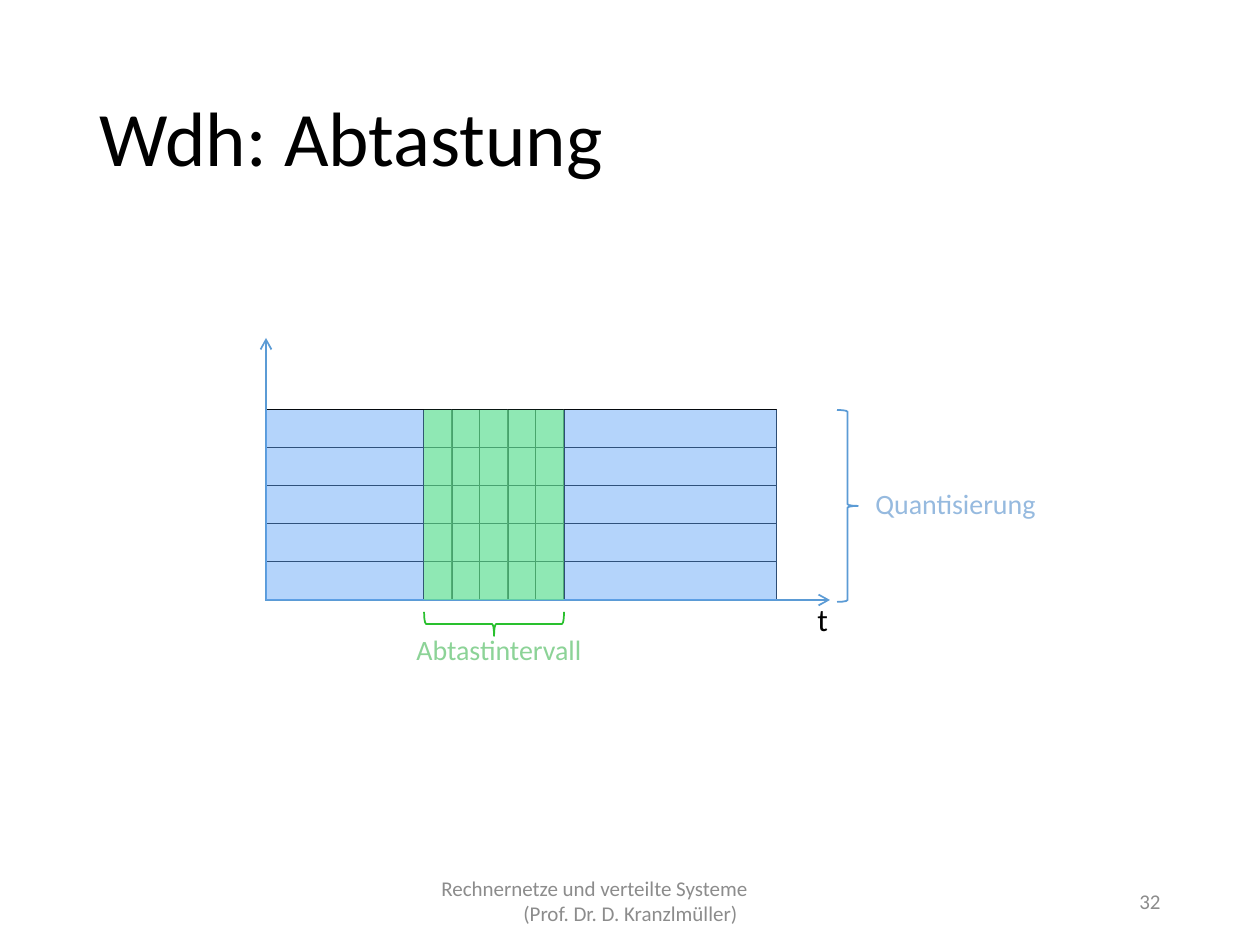
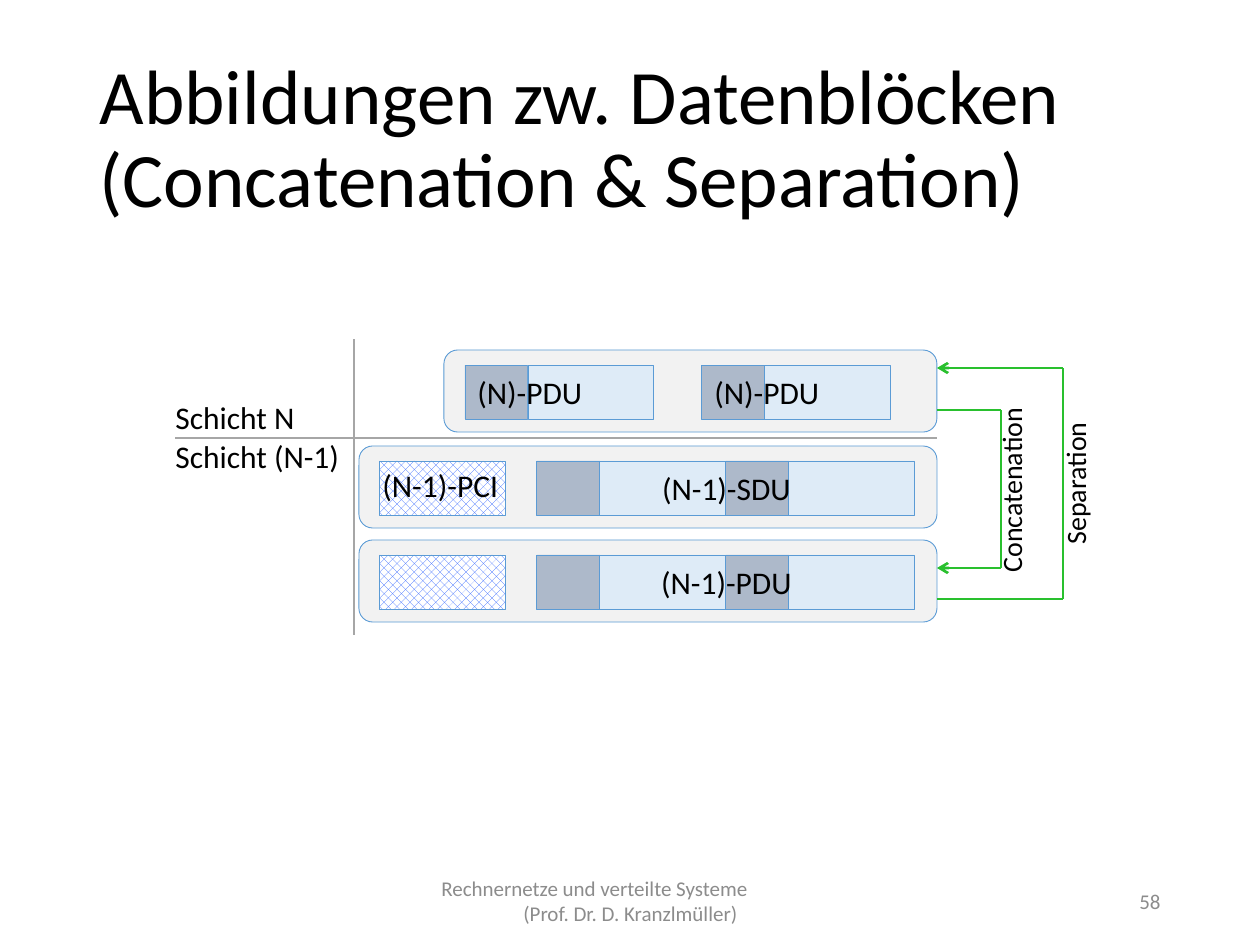
import itertools

import pptx
import pptx.dml.color
import pptx.enum.dml
import pptx.enum.shapes
import pptx.enum.text
import pptx.oxml
import pptx.oxml.ns
import pptx.util

SHAPE = pptx.enum.shapes.MSO_SHAPE
ALIGN = pptx.enum.text.PP_ALIGN
ANCHOR = pptx.enum.text.MSO_ANCHOR
FIT = pptx.enum.text.MSO_AUTO_SIZE

EMU_PER_PX = 914400 / 126
FONT = "Calibri"
COLORS = {
    "text": "000000",
    "footer": "8C8C8C",
    "white": "FFFFFF",
    "outline": "5B9BD5",
    "quantum": "61A4F7",
    "sample": "66FF66",
    "quantum_label": "96BADF",
    "sample_label": "8CD397",
    "green": "29C02E",
    "divider": "A6A6A6",
    "layer": "F2F2F2",
    "header": "ADB9CA",
    "payload": "DEEBF7",
    "pci": "3366FF",
}


def px(length):
    return pptx.util.Emu(round(length * EMU_PER_PX))


def rgb(name):
    return pptx.dml.color.RGBColor.from_string(COLORS[name])


def apply(target, values):
    for key, value in values.items():
        setattr(target, key, value)


def format_text(frame, size, color, paragraph_format, frame_format):
    apply(frame, frame_format)
    for paragraph in frame.paragraphs:
        apply(paragraph, paragraph_format)
        apply(paragraph.font, {"size": pptx.util.Pt(size), "name": FONT})
        paragraph.font.color.rgb = rgb(color)


def add_label(slide, text, box, size=18, color="text", align=ALIGN.LEFT,
              wrap=False, anchor=ANCHOR.TOP, rotation=0):
    label = slide.shapes.add_textbox(*map(px, box))
    label.rotation = rotation
    label.text_frame.text = text
    format_text(label.text_frame, size, color, {"alignment": align},
                {"word_wrap": wrap, "vertical_anchor": anchor,
                 "auto_size": FIT.NONE if wrap else FIT.SHAPE_TO_FIT_TEXT})
    return label


def add_block(slide, box, fill=None, line=None, width=0.5,
              kind=SHAPE.RECTANGLE, alpha=None):
    block = slide.shapes.add_shape(kind, *map(px, box))
    block.shadow.inherit = False
    if fill:
        block.fill.solid()
        block.fill.fore_color.rgb = rgb(fill)
    else:
        block.fill.background()
    if line:
        block.line.color.rgb = rgb(line)
        block.line.width = pptx.util.Pt(width)
    else:
        block.line.fill.background()
    if alpha:
        color = block.fill._xPr.find(".//" + pptx.oxml.ns.qn("a:srgbClr"))
        pptx.oxml.ns.qn("a:alpha")
        opacity = color.makeelement(pptx.oxml.ns.qn("a:alpha"), {"val": str(alpha * 1000)})
        color.append(opacity)
    return block


def add_line(slide, start, end, color, width, arrow=False):
    line = slide.shapes.add_connector(
        pptx.enum.shapes.MSO_CONNECTOR.STRAIGHT, *map(px, start + end))
    line.line.color.rgb = rgb(color)
    line.line.width = pptx.util.Pt(width)
    properties = line._element.spPr
    if arrow:
        outline = line.line._get_or_add_ln()
        outline.append(outline.makeelement(pptx.oxml.ns.qn("a:tailEnd"), {"type": "arrow"}))
    properties.append(properties.makeelement(pptx.oxml.ns.qn("a:effectLst"), {}))


def add_route(slide, corners):
    legs = list(itertools.pairwise(corners))
    for start, end in legs:
        add_line(slide, start, end, "green", 1.5, arrow=end == corners[-1])


def add_footer(slide, number):
    course = add_label(
        slide, "Rechnernetze und verteilte Systeme\v(Prof. Dr. D. Kranzlmüller)",
        (417, 876, 426, 50), 12, "footer", wrap=True, anchor=ANCHOR.MIDDLE)
    hanging = course.text_frame.paragraphs[0]._p.get_or_add_pPr()
    hanging.set("marL", str(px(94)))
    hanging.set("indent", str(px(-82)))
    add_label(slide, str(number), (890, 876, 283, 50), 12, "footer",
              ALIGN.RIGHT, wrap=True, anchor=ANCHOR.MIDDLE)


def add_slide(deck, title, number):
    slide = deck.slides.add_slide(deck.slide_layouts[5])
    heading = slide.shapes.title
    apply(heading, {"left": px(87), "top": px(50), "width": px(1086), "height": px(183)})
    heading.text_frame.text = title
    format_text(heading.text_frame, 44, "text",
                {"alignment": ALIGN.LEFT, "line_spacing": 0.9},
                {"vertical_anchor": ANCHOR.MIDDLE, "word_wrap": True,
                 "auto_size": FIT.NONE})
    add_footer(slide, number)
    return slide


def build_sampling(deck):
    slide = add_slide(deck, "Wdh: Abtastung", 32)
    left, top, right = 266, 410, 777
    level_height, sample_width, count = 38, 28, 5
    bottom = top + count * level_height
    interval_left = 424
    interval_right = interval_left + count * sample_width
    levels = [top + i * level_height for i in range(count)]
    samples = [interval_left + i * sample_width for i in range(count)]
    edges = [left, *samples, interval_right, right]

    for (start, end), level in itertools.product(itertools.pairwise(edges), levels):
        add_block(slide, (start, level, end - start, level_height), "white", "text")
    add_line(slide, (left, bottom), (left, 338), "outline", 1, arrow=True)
    add_line(slide, (left - 1, bottom), (830, bottom), "outline", 1, arrow=True)
    for level in levels:
        add_block(slide, (left, level, right - left, level_height), "quantum", alpha=47)
    for sample in samples:
        add_block(slide, (sample, top, sample_width, bottom - top), "sample", alpha=47)

    add_block(slide, (837, top, 21, 192), line="outline", width=1, kind=SHAPE.RIGHT_BRACE)
    interval_brace = add_block(slide, (482, 554, 24, 140), line="green", width=1,
                               kind=SHAPE.RIGHT_BRACE)
    interval_brace.rotation = 90
    add_label(slide, "Quantisierung", (863, 480, 188, 47), 16, "quantum_label")
    add_label(slide, "Abtastintervall", (404, 626, 194, 47), 16, "sample_label")
    add_label(slide, "t", (805, 594, 37, 50))


def add_unit(slide, left, top):
    add_block(slide, (left, top, 63, 54), "header", "outline")
    add_block(slide, (left + 63, top, 126, 54), "payload", "outline")


def add_layer(slide, left, top):
    add_block(slide, (left, top, 937 - left, 82), "layer", "outline",
              kind=SHAPE.ROUNDED_RECTANGLE)


def add_lower_layer(slide, top, name):
    add_layer(slide, 359, top)
    pci = add_block(slide, (380, top + 15, 126, 54), "white", "outline")
    pci.fill.patterned()
    pci.fill.pattern = pptx.enum.dml.MSO_PATTERN.PERCENT_50
    pci.fill.fore_color.rgb = rgb("pci")
    pci.fill.back_color.rgb = rgb("white")
    for left in (537, 726):
        add_unit(slide, left, top + 15)
    add_label(slide, name, (537, top + 17, 379, 50), align=ALIGN.CENTER, wrap=True)


def build_concatenation(deck):
    slide = add_slide(deck, "Abbildungen zw. Datenblöcken\v(Concatenation & Separation)", 58)
    add_line(slide, (354, 635), (354, 339), "divider", 1.5)
    add_line(slide, (937, 438), (175, 438), "divider", 1.5)
    add_label(slide, "Schicht N", (163, 392, 146, 50))
    add_label(slide, "Schicht (N-1)", (163, 431, 192, 50))

    add_layer(slide, 444, 350)
    for left in (465, 702):
        add_unit(slide, left, 365)
        add_label(slide, "(N)-PDU", (left, 367, 189, 50), wrap=True)
    add_lower_layer(slide, 446, "(N-1)-SDU")
    add_label(slide, "(N-1)-PCI", (370, 460, 147, 50), wrap=True)
    add_lower_layer(slide, 540, "(N-1)-PDU")

    add_label(slide, "Separation", (960, 460, 231, 47), 16, align=ALIGN.CENTER,
              wrap=True, rotation=270)
    add_label(slide, "Concatenation", (914, 464, 195, 47), 16, wrap=True, rotation=270)
    add_route(slide, [(937, 410), (1001, 410), (1001, 568), (937, 568)])
    add_route(slide, [(937, 599), (1063, 599), (1063, 368), (937, 368)])


def main():
    deck = pptx.Presentation()
    apply(deck, {"slide_width": px(1260), "slide_height": px(945)})
    build_sampling(deck)
    build_concatenation(deck)
    deck.save("out.pptx")


if __name__ == "__main__":
    main()
